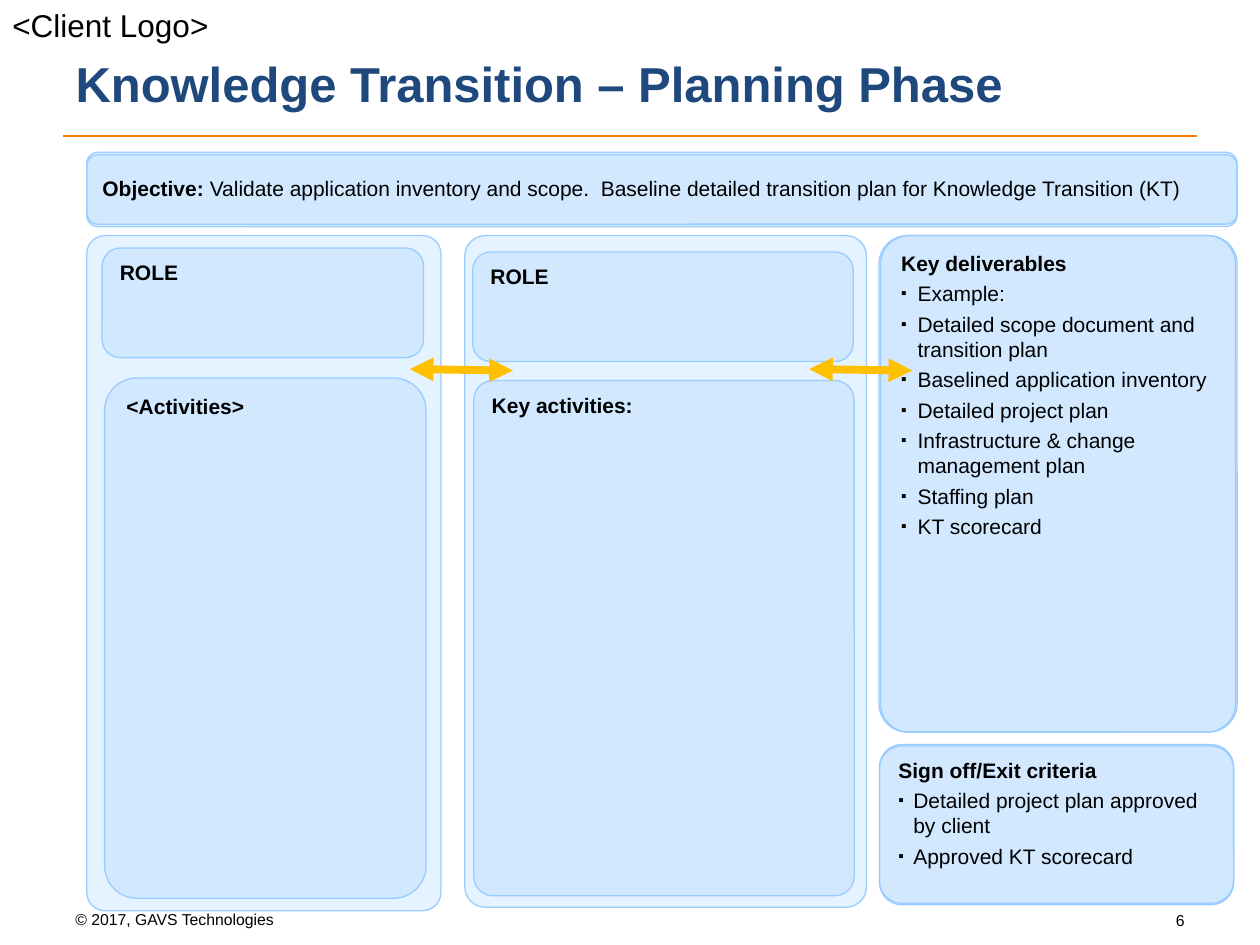
from lxml import etree
from pptx import Presentation
from pptx.dml.color import RGBColor
from pptx.enum import shapes, text
from pptx.oxml import ns
from pptx.util import Cm, Pt

BLACK = RGBColor(0x00, 0x00, 0x00)
NAVY = RGBColor(0x1F, 0x49, 0x7D)
SKY = RGBColor(0x99, 0xCC, 0xFF)
ORANGE = RGBColor(0xF6, 0x7B, 0x00)
AMBER = RGBColor(0xFF, 0xC0, 0x00)
FONT = "Arial"
COLUMN_TOP = 4.75

TITLE = "Knowledge Transition – Planning Phase"
LABELS = [
    ("© 2017, GAVS Technologies", (1.27, 18.21, 7.82, 0.64), 9, text.PP_ALIGN.LEFT),
    ("<Client Logo>", (0, 0, 6.35, 1.02), 18, text.PP_ALIGN.LEFT),
    ("6", (18.21, 18.24, 5.92, 1.02), 9, text.PP_ALIGN.RIGHT),
]
DELIVERABLES = [
    "Example:",
    "Detailed scope document and transition plan",
    "Baselined application inventory",
    "Detailed project plan",
    "Infrastructure & change management plan",
    "Staffing plan",
    "KT scorecard",
]
EXIT_CRITERIA = ["Detailed project plan approved by client", "Approved KT scorecard"]
OBJECTIVE = ("Validate application inventory and scope.  "
             "Baseline detailed transition plan for Knowledge Transition (KT)")

COLUMNS = [
    {"panel": (1.75, 7.14, 13.61),
     "boxes": [("ROLE", (2.06, 5.0, 6.48, 2.21), 0.166, 0),
               ("<Activities>", (2.11, 7.62, 6.48, 10.49), 0.101, 0.33)]},
    {"panel": (9.37, 8.1, 13.54),
     "boxes": [("ROLE", (9.53, 5.08, 7.67, 2.21), 0.166, 0),
               ("Key activities:", (9.55, 7.67, 7.67, 10.39), 0.051, 0.33)]},
]
DOUBLE_CARDS = [
    {"heading": "Objective: ", "detail": OBJECTIVE, "bullets": [], "hang": 0.33,
     "place": (1.75, 3.07, 23.19, 1.45), "back": (0, 0.05), "corner": 0.156},
    {"heading": "Key deliverables", "detail": "", "bullets": DELIVERABLES, "hang": 0.33,
     "place": (17.75, COLUMN_TOP, 7.19, 10.01), "back": (-0.03, 0), "corner": 0.08},
    {"heading": "Sign off/Exit criteria", "detail": "", "bullets": EXIT_CRITERIA, "hang": 0.3,
     "place": (17.73, 15.01, 7.14, 3.2), "back": (0, 0.03), "corner": 0.142},
]
ARROW_STARTS = [8.26, 16.31]
ARROW_WIDTH = 2.08


def add_run(paragraph, words, size=12, bold=False, color=BLACK):
    run = paragraph.add_run()
    run.text = words
    run.font.name = FONT
    run.font.size = Pt(size)
    run.font.bold = bold
    run.font.color.rgb = color


def set_hang(paragraph, hang):
    props = paragraph._p.get_or_add_pPr()
    props.set("marL", str(Cm(hang)))
    props.set("indent", str(-Cm(hang)))
    return props


def add_bullet(frame, words, hang):
    paragraph = frame.add_paragraph()
    props = set_hang(paragraph, hang)
    tint = etree.SubElement(props, ns.qn("a:buClr"))
    etree.SubElement(tint, ns.qn("a:srgbClr"), val=str(BLACK))
    etree.SubElement(props, ns.qn("a:buSzPct"), val="75000")
    etree.SubElement(props, ns.qn("a:buFont"), typeface=FONT)
    etree.SubElement(props, ns.qn("a:buChar"), char="▪")
    paragraph.space_before = Pt(3)
    add_run(paragraph, words)


def add_card(slide, place, corner):
    card = slide.shapes.add_shape(
        shapes.MSO_SHAPE.ROUNDED_RECTANGLE, *map(Cm, place))
    card.adjustments[0] = corner
    card.shadow.inherit = False
    card.fill.solid()
    card.fill.fore_color.rgb = SKY
    tint = card._element.spPr.find(ns.qn("a:solidFill"))[0]
    etree.SubElement(tint, ns.qn("a:alpha"), val="25000")
    card.line.color.rgb = SKY
    card.line.width = Pt(0.75)
    return card


def write_heading(card, heading, hang):
    frame = card.text_frame
    frame.word_wrap = True
    frame.vertical_anchor = text.MSO_ANCHOR.TOP
    paragraph = frame.paragraphs[0]
    paragraph.alignment = text.PP_ALIGN.LEFT
    set_hang(paragraph, hang)
    add_run(paragraph, heading, bold=True)
    return frame


def add_line(slide, ends, color, width, arrowed=False):
    line = slide.shapes.add_connector(
        shapes.MSO_CONNECTOR.STRAIGHT, *map(Cm, ends))
    line.line.color.rgb = color
    line.line.width = Pt(width)
    if arrowed:
        stroke = line.line._get_or_add_ln()
        for end in ("a:headEnd", "a:tailEnd"):
            etree.SubElement(stroke, ns.qn(end), type="triangle")
    etree.SubElement(line._element.spPr, ns.qn("a:effectLst"))


def add_label(slide, words, place, size, alignment):
    label = slide.shapes.add_textbox(*map(Cm, place))
    label.text_frame.word_wrap = True
    paragraph = label.text_frame.paragraphs[0]
    paragraph.alignment = alignment
    add_run(paragraph, words, size)


def add_title(slide):
    title = slide.shapes.title
    title.left, title.top, title.width, title.height = map(Cm, (1.27, 0.56, 22.86, 2.21))
    title.text_frame.vertical_anchor = text.MSO_ANCHOR.MIDDLE
    paragraph = title.text_frame.paragraphs[0]
    paragraph.alignment = text.PP_ALIGN.LEFT
    add_run(paragraph, TITLE, 28, True, NAVY)


def main():
    deck = Presentation()
    deck.slide_width, deck.slide_height = Cm(25.4), Cm(19.05)
    slide = deck.slides.add_slide(deck.slide_layouts[5])
    add_title(slide)
    add_line(slide, (1.27, 2.74, 24.13, 2.74), ORANGE, 0.75)
    for label in LABELS:
        add_label(slide, *label)

    for column in COLUMNS:
        left, width, height = column["panel"]
        add_card(slide, (left, COLUMN_TOP, width, height), 0.051)
        for heading, place, corner, hang in column["boxes"]:
            write_heading(add_card(slide, place, corner), heading, hang)

    for card in DOUBLE_CARDS:
        left, top, width, height = card["place"]
        shift_x, shift_y = card["back"]
        add_card(slide, (left + shift_x, top + shift_y, width, height), card["corner"])
        front = add_card(slide, card["place"], card["corner"])
        frame = write_heading(front, card["heading"], card["hang"])
        if card["detail"]:
            frame.vertical_anchor = text.MSO_ANCHOR.MIDDLE
            add_run(frame.paragraphs[0], card["detail"])
        for words in card["bullets"]:
            add_bullet(frame, words, card["hang"])

    for start in ARROW_STARTS:
        add_line(slide, (start, 7.44, start + ARROW_WIDTH, 7.47), AMBER, 4.5, True)
    deck.save("out.pptx")


if __name__ == "__main__":
    main()
